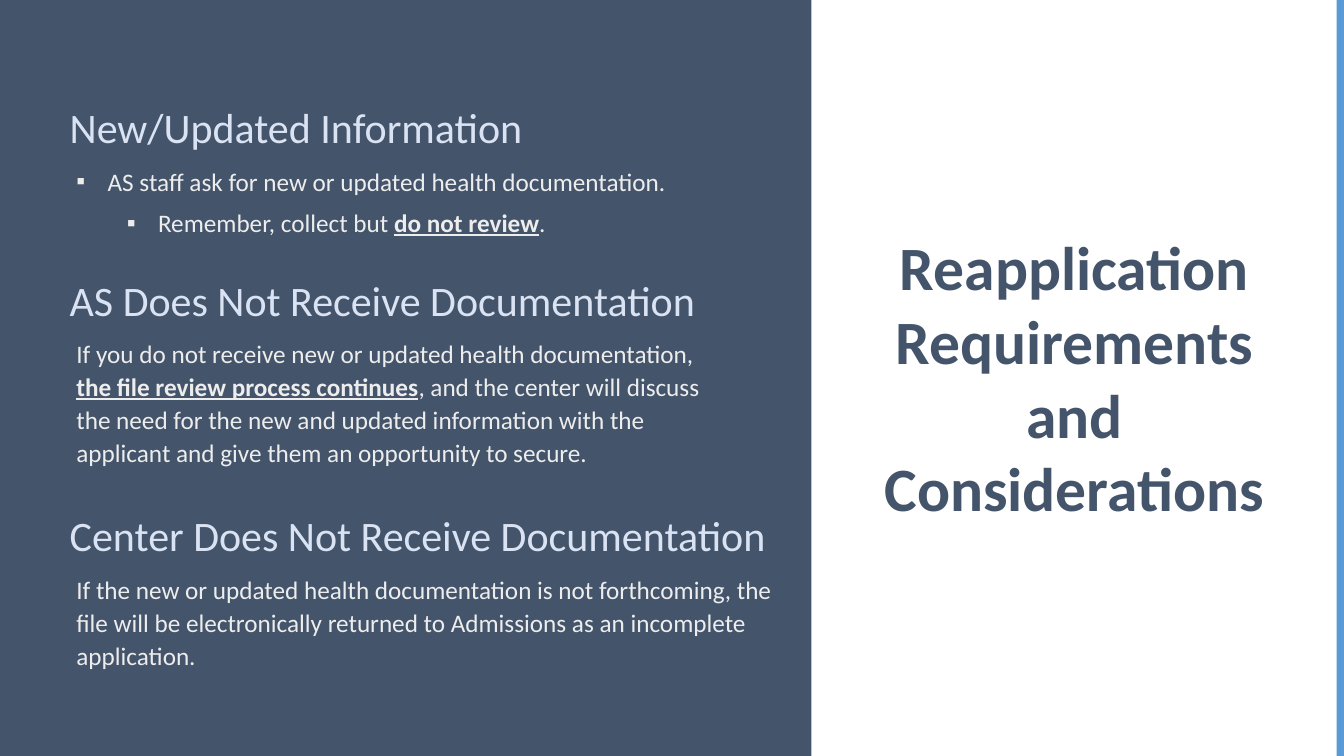
from lxml.etree import SubElement
from pptx import Presentation
from pptx.dml.color import RGBColor
from pptx.enum.shapes import MSO_SHAPE as Shape
from pptx.enum.text import MSO_AUTO_SIZE as Fit, PP_ALIGN as Align
from pptx.oxml.ns import qn
from pptx.util import Inches, Pt

WIDE, HIGH = Inches(13.333), Inches(7.5)
SLATE, BLUE, PALE, LIGHT = "44546A", "5B9BD5", "DAE3F3", "EDEDED"
LEFT, INSET, HEAD = 4.45, 0.5, 8.13  # percent of the slide

# top, heading, heading width, body width, body height, bulleted, lines;
# a line is (level, text), and text between asterisks is stressed
PARTS = [
    (12.8, "New/Updated Information", 37.2, 50.7, 11.07, True, [
        (0, "AS staff ask for new or updated health documentation."),
        (1, "Remember, collect but *do not review*."),
    ]),
    (35.6, "AS Does Not Receive Documentation", 49.35, 49.5, 18.8, False, [
        (0, "If you do not receive new or updated health documentation, "
            "*the file review process continues*, and the center will discuss "
            "the need for the new and updated information with the applicant "
            "and give them an opportunity to secure."),
    ]),
    (66.8, "Center Does Not Receive Documentation", 54.83, 54.38, 14.4, False, [
        (0, "If the new or updated health documentation is not forthcoming, "
            "the file will be electronically returned to Admissions as an "
            "incomplete application."),
    ]),
]


def color(code):
    return RGBColor.from_string(code)


def place(x, y, w, h):
    """Turn percent of the slide into lengths."""
    return (int(WIDE * x / 100), int(HIGH * y / 100),
            int(WIDE * w / 100), int(HIGH * h / 100))


def add_band(slide, x, w, fill):
    band = slide.shapes.add_shape(Shape.RECTANGLE, *place(x, 0, w, 100))
    band.shadow.inherit = False
    band.fill.solid()
    band.fill.fore_color.rgb = color(fill)
    band.line.fill.background()


def add_frame(slide, *area):
    frame = slide.shapes.add_textbox(*place(*area)).text_frame
    frame.word_wrap = True
    frame.auto_size = Fit.SHAPE_TO_FIT_TEXT
    return frame


def style(run, size, tint, bold=False):
    font = run.font
    font.name, font.size, font.bold = "Calibri", Pt(size), bold
    font.color.rgb = color(tint)


def add_label(slide, text, area, size, tint, bold=False, align=Align.LEFT):
    frame = add_frame(slide, *area)
    frame.text = text
    para = frame.paragraphs[0]
    para.alignment = align
    style(para.runs[0], size, tint, bold)


def add_bullet(para):
    props = para._p.get_or_add_pPr()
    props.set("marL", str(Inches(0.31 + 0.5 * para.level)))
    props.set("indent", str(-Inches(0.31)))
    SubElement(props, qn("a:buFont"), typeface="Arial")
    SubElement(props, qn("a:buChar"), char="▪")


def add_body(slide, lines, area, bullets):
    frame = add_frame(slide, *area)
    for i, (level, text) in enumerate(lines):
        para = frame.add_paragraph() if i else frame.paragraphs[0]
        para.level = level
        para.line_spacing = 1.09
        para.space_before = Pt(6)
        if bullets:
            add_bullet(para)
        for j, piece in enumerate(text.split("*")):
            run = para.add_run()
            run.text = piece
            stress = j % 2 == 1
            style(run, 18, LIGHT, stress)
            run.font.underline = stress


def main():
    deck = Presentation()
    deck.slide_width, deck.slide_height = WIDE, HIGH
    slide = deck.slides.add_slide(deck.slide_layouts[6])

    add_band(slide, 0, 60.38, SLATE)
    for top, head, wide, span, high, bullets, lines in PARTS:
        add_label(slide, head, (LEFT, top, wide, HEAD), 30, PALE)
        add_body(slide, lines, (LEFT + INSET, top + HEAD, span, high), bullets)
    add_label(slide, "Reapplication Requirements and Considerations",
              (64.28, 29.6, 31.35, 40.8), 44, SLATE, True, Align.CENTER)
    add_band(slide, 99.45, 0.55, BLUE)

    deck.save("out.pptx")


if __name__ == "__main__":
    main()
